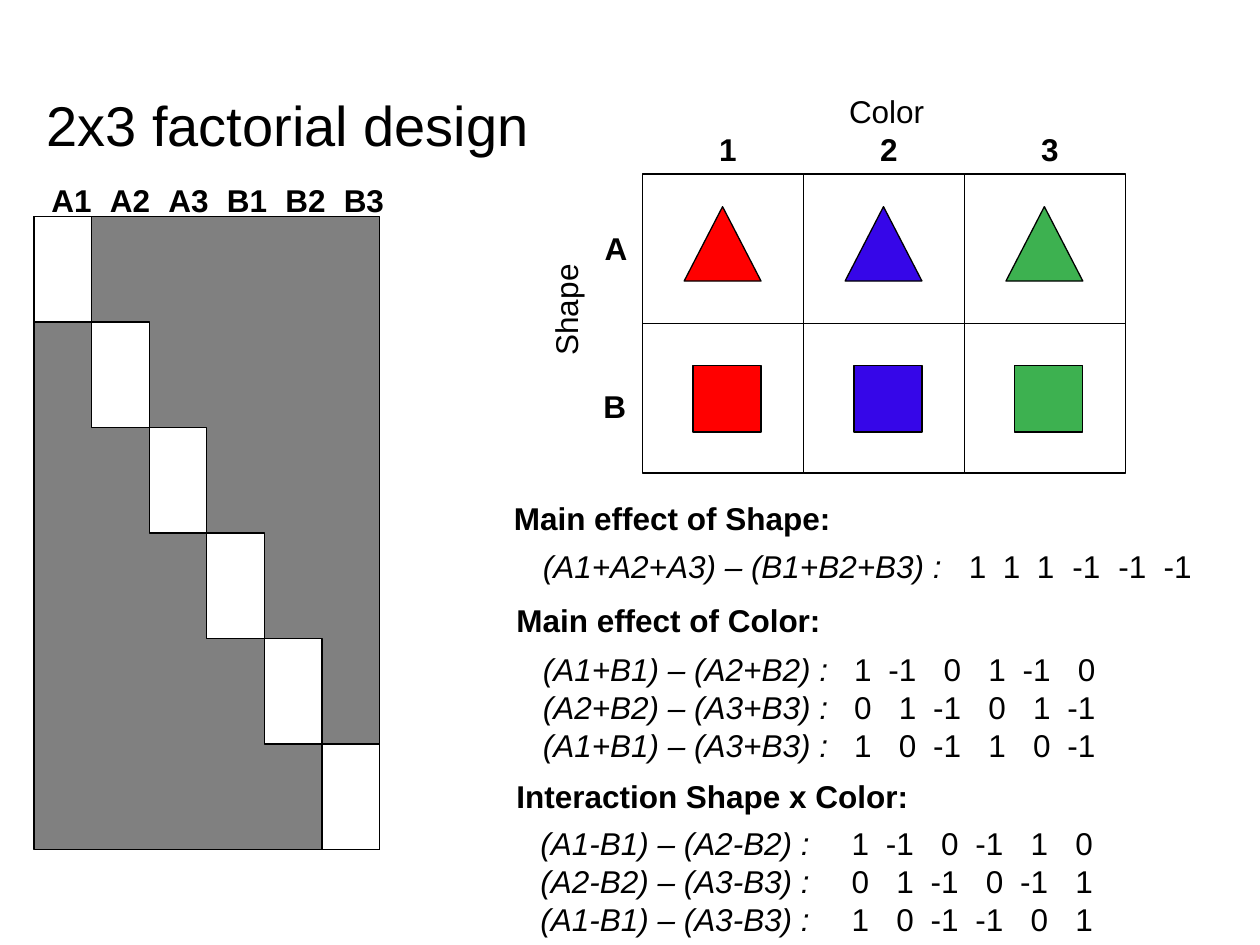
from itertools import accumulate

from lxml import etree
from pptx import Presentation, util as u
from pptx.dml import color
from pptx.enum import shapes, text
from pptx.oxml import ns

COLORS = {"black": "000000", "white": "FFFFFF", "gray": "808080",
          "red": "FF0000", "blue": "3606E8", "green": "3DB150"}
COLUMNS, ROWS = 100, 75
RECTANGLE = shapes.MSO_SHAPE.RECTANGLE
TRIANGLE = shapes.MSO_SHAPE.ISOSCELES_TRIANGLE


class SlideBuilder:
    """Draws on a grid of 100 columns by 75 rows."""

    formats = {"name": "Arial", "size": u.Pt(18), "bold": False, "italic": False}

    def __init__(self, presentation):
        self.slide = presentation.slides.add_slide(presentation.slide_layouts[6])
        self.shapes = self.slide.shapes
        self.column = presentation.slide_width / COLUMNS
        self.row = presentation.slide_height / ROWS

    def group(self):
        self.shapes = self.slide.shapes.add_group_shape().shapes

    def place(self, left, top, width, height):
        return (round(left * self.column), round(top * self.row),
                round(width * self.column), round(height * self.row))

    def shape(self, kind, fill, *box):
        shape = self.shapes.add_shape(kind, *self.place(*box))
        shape.shadow.inherit = False
        shape.fill.solid()
        shape.fill.fore_color.rgb = color.RGBColor.from_string(COLORS[fill])
        shape.line.color.rgb = color.RGBColor.from_string(COLORS["black"])
        shape.line.width = u.Pt(0.75)

    def run(self, paragraph, words, **changes):
        run = paragraph.add_run()
        run.text = words
        for name, value in {**self.formats, **changes}.items():
            setattr(run.font, name, value)
        run.font.color.rgb = color.RGBColor.from_string(COLORS["black"])

    def frame(self, *box, wrap=False):
        frame = self.shapes.add_textbox(*self.place(*box)).text_frame
        frame.word_wrap = wrap
        frame.auto_size = text.MSO_AUTO_SIZE.SHAPE_TO_FIT_TEXT
        return frame

    def label(self, words, *box, upward=False, **changes):
        frame = self.frame(*box)
        if upward:
            frame._txBody.bodyPr.set("vert", "vert270")
        self.run(frame.paragraphs[0], words, **changes)

    def contrasts(self, lines, stops, *box):
        """Each line is a comparison followed by its right-aligned weights."""
        frame = self.frame(*box, wrap=True)
        for index, (comparison, weights) in enumerate(lines):
            paragraph = frame.add_paragraph() if index else frame.paragraphs[0]
            properties = paragraph._p.get_or_add_pPr()
            tabs = etree.SubElement(properties, ns.qn("a:tabLst"))
            for stop in stops:
                etree.SubElement(tabs, ns.qn("a:tab"), algn="r",
                                 pos=str(round(stop * self.column)))
            self.run(paragraph, comparison, italic=True)
            self.run(paragraph, "".join(f"\t{weight}" for weight in weights))


def main():
    presentation = Presentation()
    presentation.slide_width, presentation.slide_height = u.Inches(10), u.Inches(7.5)
    builder = SlideBuilder(presentation)

    # Title
    builder.label("2x3 factorial design", 2.7, 6.7, 92.8, 6.3, size=u.Pt(32))

    # Effect headings
    for heading, left, top, width in [
            ("Main effect of Shape:", 39.8, 39.1, 27.2),
            ("Main effect of Color:", 40, 47.2, 26.2),
            ("Interaction Shape x Color:", 40, 61.2, 33.1)]:
        builder.label(heading, left, top, width, 4, bold=True)

    # Contrast weights
    even_stops = [26.1 + 3.55 * index for index in range(6)]
    shape_stops = list(accumulate([35.2, 2.7, 2.7, 3.65, 3.65, 3.6]))
    builder.contrasts([("(A1+A2+A3) – (B1+B2+B3) :", (1, 1, 1, -1, -1, -1))],
                      shape_stops, 42.1, 42.9, 55, 4)
    builder.contrasts([("(A1+B1) – (A2+B2) :", (1, -1, 0, 1, -1, 0)),
                       ("(A2+B2) – (A3+B3) :", (0, 1, -1, 0, 1, -1)),
                       ("(A1+B1) – (A3+B3) :", (1, 0, -1, 1, 0, -1))],
                      even_stops, 42.1, 51.1, 53.5, 10)
    builder.contrasts([("(A1-B1) – (A2-B2) :", (1, -1, 0, -1, 1, 0)),
                       ("(A2-B2) – (A3-B3) :", (0, 1, -1, 0, -1, 1)),
                       ("(A1-B1) – (A3-B3) :", (1, 0, -1, -1, 0, 1))],
                      even_stops, 41.9, 64.9, 53.5, 10)

    # Factor grid: colors across, shapes down
    builder.group()
    cell_width, cell_height = 12.77, 11.87
    for index, fill in enumerate(["red", "blue", "green"]):
        left = 51 + index * cell_width
        for row in range(2):
            builder.shape(RECTANGLE, "white", left, 13.8 + row * cell_height,
                          cell_width, cell_height)
        builder.shape(TRIANGLE, fill, left + 3.3, 16.4, 6.1, 5.9)
        builder.shape(RECTANGLE, fill, left + 4, 29, 5.4, 5.3)
        builder.label(str(index + 1), left + 5.1, 9.8, 3.4, 4, bold=True)
    builder.label("A", 47, 17.7, 3.8, 4, bold=True)
    builder.label("B", 46.9, 30.2, 3.8, 4, bold=True)
    builder.label("Color", 66.4, 6.8, 8, 4)
    builder.label("Shape", 42.9, 21, 5, 8.2, upward=True)

    # Design matrix: one white step per condition
    builder.group()
    step_width, step_height = 4.57, 8.37
    builder.shape(RECTANGLE, "gray", 2.7, 17.2, 6 * step_width, 6 * step_height)
    for index, condition in enumerate(["A1", "A2", "A3", "B1", "B2", "B3"]):
        builder.shape(RECTANGLE, "white", 2.7 + index * step_width,
                      17.2 + index * step_height, step_width, step_height)
        builder.label(condition, 3.1 + index * 4.64, 13.9, 5.2, 4, bold=True)

    presentation.save("out.pptx")


if __name__ == "__main__":
    main()
